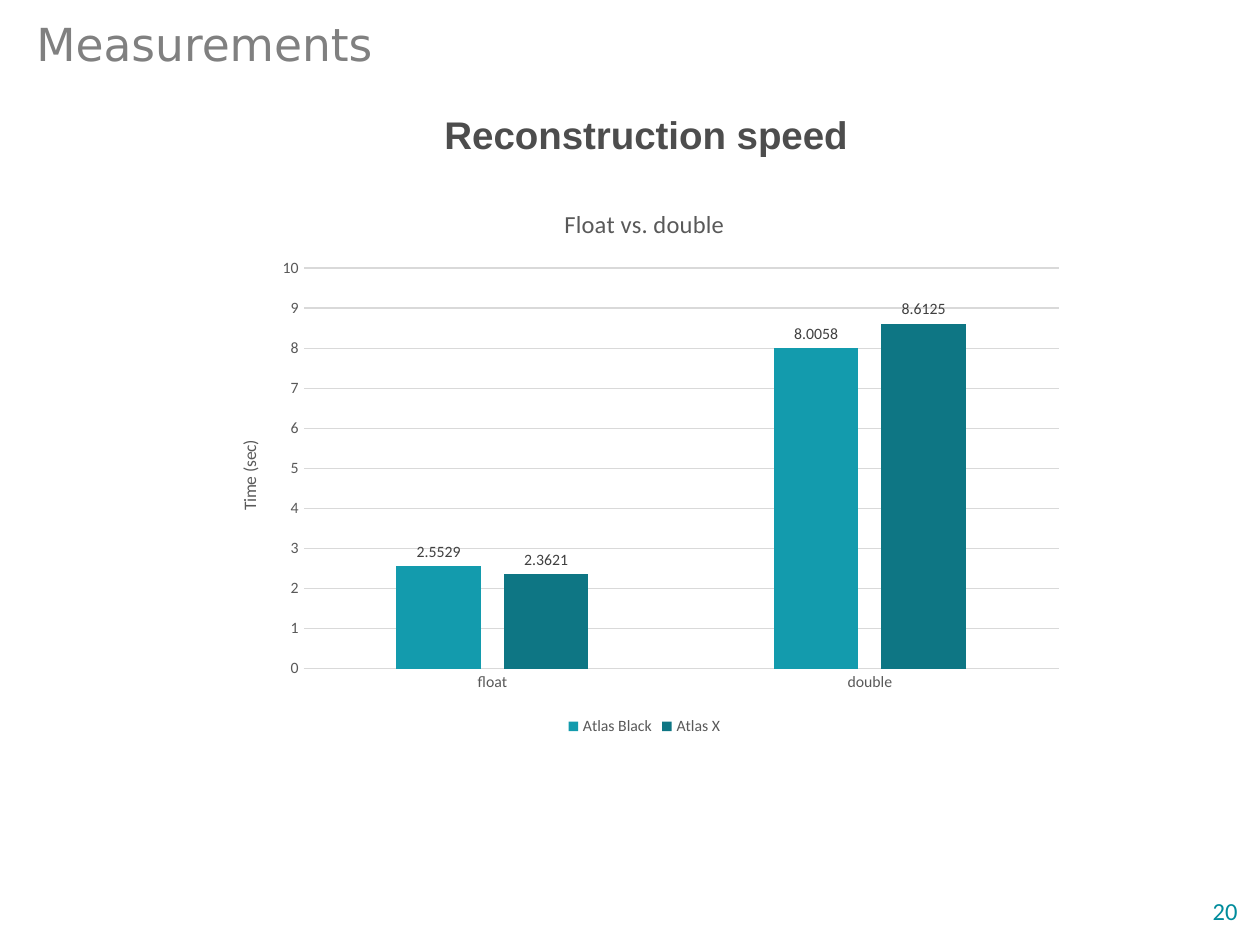
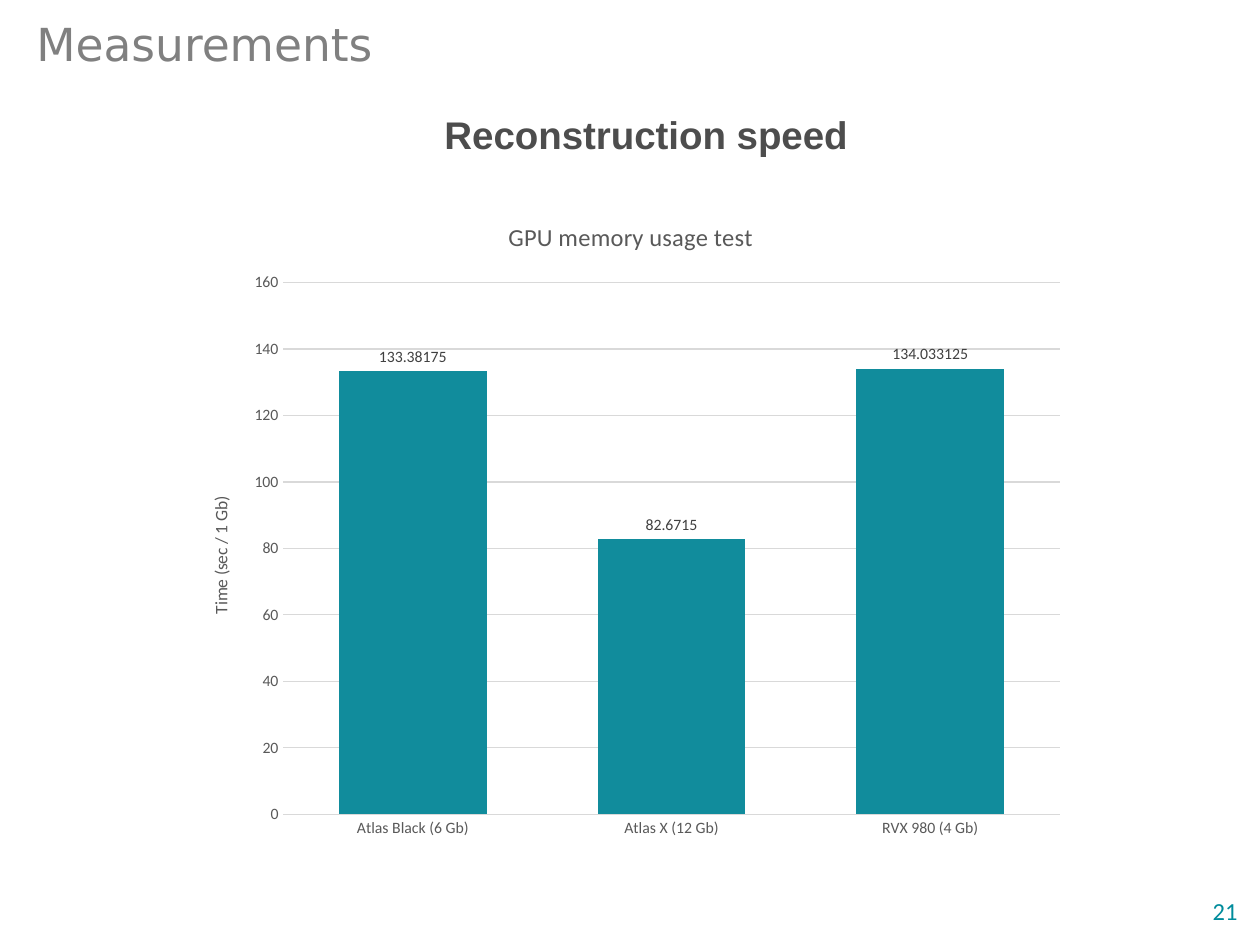
from dataclasses import dataclass

from pptx import Presentation
from pptx.chart.data import CategoryChartData
from pptx.dml.color import RGBColor
from pptx.enum.chart import XL_CHART_TYPE, XL_LABEL_POSITION, XL_LEGEND_POSITION, XL_TICK_MARK
from pptx.enum.text import MSO_ANCHOR, MSO_AUTO_SIZE, PP_ALIGN
from pptx.oxml.ns import qn
from pptx.util import Cm, Pt

TITLE_GREY = RGBColor(0x80, 0x80, 0x80)
HEADING_GREY = RGBColor(0x4D, 0x4D, 0x4D)
CHART_GREY = RGBColor(0x59, 0x59, 0x59)
LABEL_GREY = RGBColor(0x40, 0x40, 0x40)
GRID_GREY = RGBColor(0xD9, 0xD9, 0xD9)
PAGE_TEAL = RGBColor(0x00, 0x8C, 0x9C)
LIGHT_TEAL = RGBColor(0x13, 0x9B, 0xAD)
DARK_TEAL = RGBColor(0x0E, 0x76, 0x84)
MID_TEAL = RGBColor(0x11, 0x8C, 0x9C)

TITLE_BOX = (0.48, 0.25, 23.39, 1.32)
HEADING_BOX = (8.71, 2.11, 9.4, 1.63)
PAGE_BOX = (23.9, 17.93, 1.3, 0.81)


@dataclass
class Measurement:
    """One bar chart of timings and its scale."""
    title: str
    axis_title: str
    categories: tuple
    series: tuple
    top: int
    step: int
    gap: int
    overlap: int
    legend: bool


def style_font(font, size, color, name="Calibri", bold=False):
    """Set the whole look of a font."""
    font.size = Pt(size)
    font.name = name
    font.bold = bold
    font.color.rgb = color


def write(frame, text, align, *look, **options):
    """Write one styled run at the top of a text frame."""
    frame.word_wrap = True
    frame.auto_size = MSO_AUTO_SIZE.NONE
    frame.vertical_anchor = MSO_ANCHOR.TOP
    paragraph = frame.paragraphs[0]
    paragraph.alignment = align
    run = paragraph.add_run()
    run.text = text
    style_font(run.font, *look, **options)


def add_title(slide, box, text):
    """Move the title placeholder into the box and fill it."""
    title = slide.shapes.title
    title.left, title.top, title.width, title.height = map(Cm, box)
    write(title.text_frame, text, PP_ALIGN.LEFT, 26, TITLE_GREY, name="DejaVu Sans")
    title.text_frame.paragraphs[0].line_spacing = 0.98


def add_text(slide, box, text, align, *look, **options):
    """Add a text box with one styled line."""
    text_box = slide.shapes.add_textbox(*map(Cm, box))
    write(text_box.text_frame, text, align, *look, **options)


def write_chart_title(frame, text, size):
    """Write a title that belongs to a chart or an axis."""
    run = frame.paragraphs[0].add_run()
    run.text = text
    style_font(run.font, size, CHART_GREY)


def style_axes(chart, measurement):
    """Format both axes, the grid and the value axis title."""
    for axis in (chart.category_axis, chart.value_axis):
        axis.major_tick_mark = axis.minor_tick_mark = XL_TICK_MARK.NONE
        style_font(axis.tick_labels.font, 9, CHART_GREY)
    values = chart.value_axis
    values.minimum_scale = 0
    values.maximum_scale = measurement.top
    values.major_unit = measurement.step
    values.format.line.fill.background()
    for line in (chart.category_axis.format.line, values.major_gridlines.format.line):
        line.color.rgb = GRID_GREY
        line.width = Pt(0.75)
    axis_frame = values.axis_title.text_frame
    write_chart_title(axis_frame, measurement.axis_title, 10)
    axis_frame._txBody.find(qn("a:bodyPr")).set("rot", "-5400000")


def style_bars(plot, measurement):
    """Colour the bars and show their values above them."""
    plot.vary_by_categories = False
    plot.gap_width = measurement.gap
    plot.overlap = measurement.overlap
    for bars, (_, _, color) in zip(plot.series, measurement.series):
        bars.invert_if_negative = False
        bars.format.fill.solid()
        bars.format.fill.fore_color.rgb = color
        labels = bars.data_labels
        labels.show_value = True
        labels.position = XL_LABEL_POSITION.OUTSIDE_END
        style_font(labels.font, 9, LABEL_GREY)


def add_measurement_chart(slide, box, measurement):
    """Draw the timings as clustered columns in the box."""
    data = CategoryChartData()
    data.categories = measurement.categories
    for name, timings, _ in measurement.series:
        data.add_series(name, timings)
    chart = slide.shapes.add_chart(XL_CHART_TYPE.COLUMN_CLUSTERED, *map(Cm, box), data).chart
    style_font(chart.font, 10, CHART_GREY)
    chart.has_title = True
    write_chart_title(chart.chart_title.text_frame, measurement.title, 14)
    chart.chart_title.include_in_layout = False
    chart.has_legend = measurement.legend
    if measurement.legend:
        chart.legend.position = XL_LEGEND_POSITION.BOTTOM
        chart.legend.include_in_layout = False
        style_font(chart.legend.font, 9, CHART_GREY)
    style_axes(chart, measurement)
    style_bars(chart.plots[0], measurement)


def add_measurement_slide(deck, page, chart_box, measurement):
    """Build a slide with title, heading, chart and page number."""
    slide = deck.slides.add_slide(deck.slide_layouts.get_by_name("Title Only"))
    add_title(slide, TITLE_BOX, "Measurements")
    add_text(slide, HEADING_BOX, "Reconstruction speed", PP_ALIGN.LEFT,
             22, HEADING_GREY, name="Arial", bold=True)
    add_measurement_chart(slide, chart_box, measurement)
    add_text(slide, PAGE_BOX, str(page), PP_ALIGN.RIGHT, 14, PAGE_TEAL)


def main():
    """Build and save the presentation."""
    deck = Presentation()
    deck.slide_width, deck.slide_height = Cm(25.4), Cm(19.05)
    precision = Measurement(
        "Float vs. double", "Time (sec)", ("float", "double"),
        (("Atlas Black", (2.5529, 8.0058), LIGHT_TEAL),
         ("Atlas X", (2.3621, 8.6125), DARK_TEAL)),
        top=10, step=1, gap=219, overlap=-27, legend=True)
    memory = Measurement(
        "GPU memory usage test", "Time (sec / 1 Gb)",
        ("Atlas Black (6 Gb)", "Atlas X (12 Gb)", "RVX 980 (4 Gb)"),
        (("Series 1", (133.38175, 82.6715, 134.033125), MID_TEAL),),
        top=160, step=20, gap=75, overlap=40, legend=False)
    add_measurement_slide(deck, 20, (4.29, 3.73, 17.4, 11.2), precision)
    add_measurement_slide(deck, 21, (3.71, 3.94, 18.01, 13.21), memory)
    deck.save("out.pptx")


if __name__ == "__main__":
    main()
